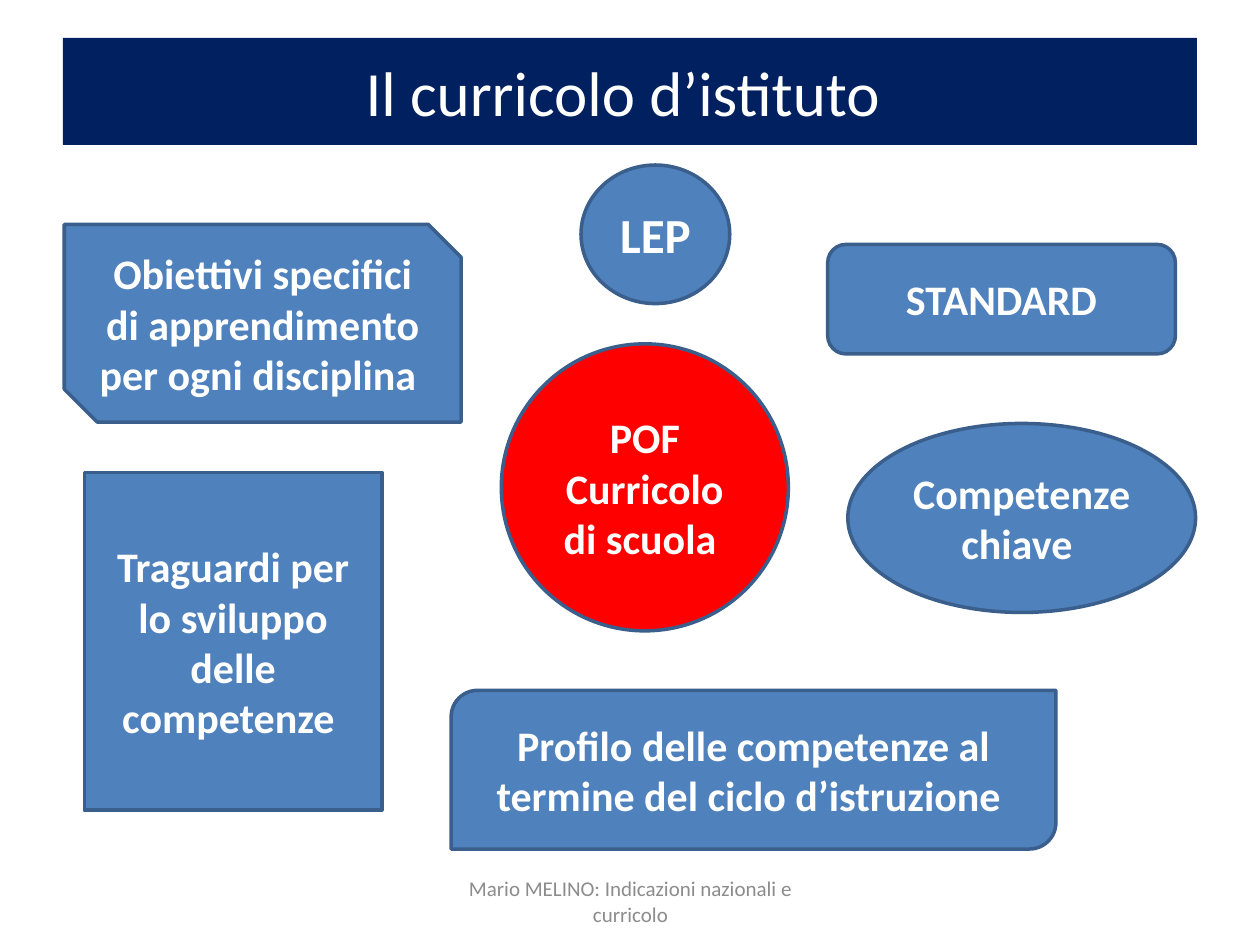
from pptx import Presentation
from pptx.dml.color import RGBColor
from pptx.enum import shapes, text
from pptx.util import Pt

FONT = "Calibri"
WHITE, NAVY, BLUE, RED = "FFFFFF", "002060", "4F81BD", "FF0000"
EDGE, GREY = "3A5F8C", "8C8C8C"
KIND = shapes.MSO_SHAPE

TOPICS = [
    (KIND.OVAL, (286.5, 196.5, 164, 164), ["POF", "Curricolo", "di scuola "], RED, 24),
    (KIND.OVAL, (332, 94.3, 85, 79.2), ["LEP"], BLUE, 28),
    (KIND.ROUNDED_RECTANGLE, (473, 139.7, 198.7, 62.6), ["STANDARD"], BLUE, 24),
    (KIND.OVAL, (484.5, 242, 198.7, 108), ["Competenze chiave "], BLUE, 24),
    (KIND.ROUND_2_DIAG_RECTANGLE, (257.8, 394.5, 345.6, 90.7),
     ["Profilo delle competenze al termine del ciclo d’istruzione "], BLUE, 24),
    (KIND.RECTANGLE, (48.2, 270, 170, 193),
     ["Traguardi per lo sviluppo delle competenze "], BLUE, 24),
    (KIND.SNIP_2_DIAG_RECTANGLE, (36.7, 128.2, 226.8, 113),
     ["Obiettivi specifici di apprendimento per ogni disciplina "], BLUE, 24),
]


def color(value):
    return RGBColor.from_string(value)


def write(shape, lines, size, ink, bold=False):
    frame = shape.text_frame
    frame.word_wrap = True
    frame.vertical_anchor = text.MSO_ANCHOR.MIDDLE
    frame.text = "\n".join(lines)
    for paragraph in frame.paragraphs:
        paragraph.alignment = text.PP_ALIGN.CENTER
        font = paragraph.font
        font.name, font.size, font.bold = FONT, Pt(size), bold
        font.color.rgb = color(ink)


def add_filled(page, kind, box, fill):
    shape = page.shapes.add_shape(kind, *map(Pt, box))
    shape.shadow.inherit = False
    shape.fill.solid()
    shape.fill.fore_color.rgb = color(fill)
    return shape


def add_title(page, box):
    banner = add_filled(page, KIND.RECTANGLE, box, NAVY)
    banner.line.fill.background()
    write(banner, ["Il curricolo d’istituto "], 36, WHITE)


def add_topic(page, kind, box, lines, fill, size):
    topic = add_filled(page, kind, box, fill)
    topic.line.color.rgb = color(EDGE)
    topic.line.width = Pt(2)
    write(topic, lines, size, WHITE, bold=True)


def add_footer(page, box):
    footer = page.shapes.add_textbox(*map(Pt, box))
    write(footer, ["Mario MELINO: Indicazioni nazionali e curricolo"], 12, GREY)


def main():
    deck = Presentation()
    deck.slide_width, deck.slide_height = Pt(720), Pt(540)
    page = deck.slides.add_slide(deck.slide_layouts[6])
    add_title(page, (36, 21.6, 648, 61.2))
    for topic in TOPICS:
        add_topic(page, *topic)
    add_footer(page, (246.2, 500.5, 228.2, 28.8))
    deck.save("out.pptx")


if __name__ == "__main__":
    main()
